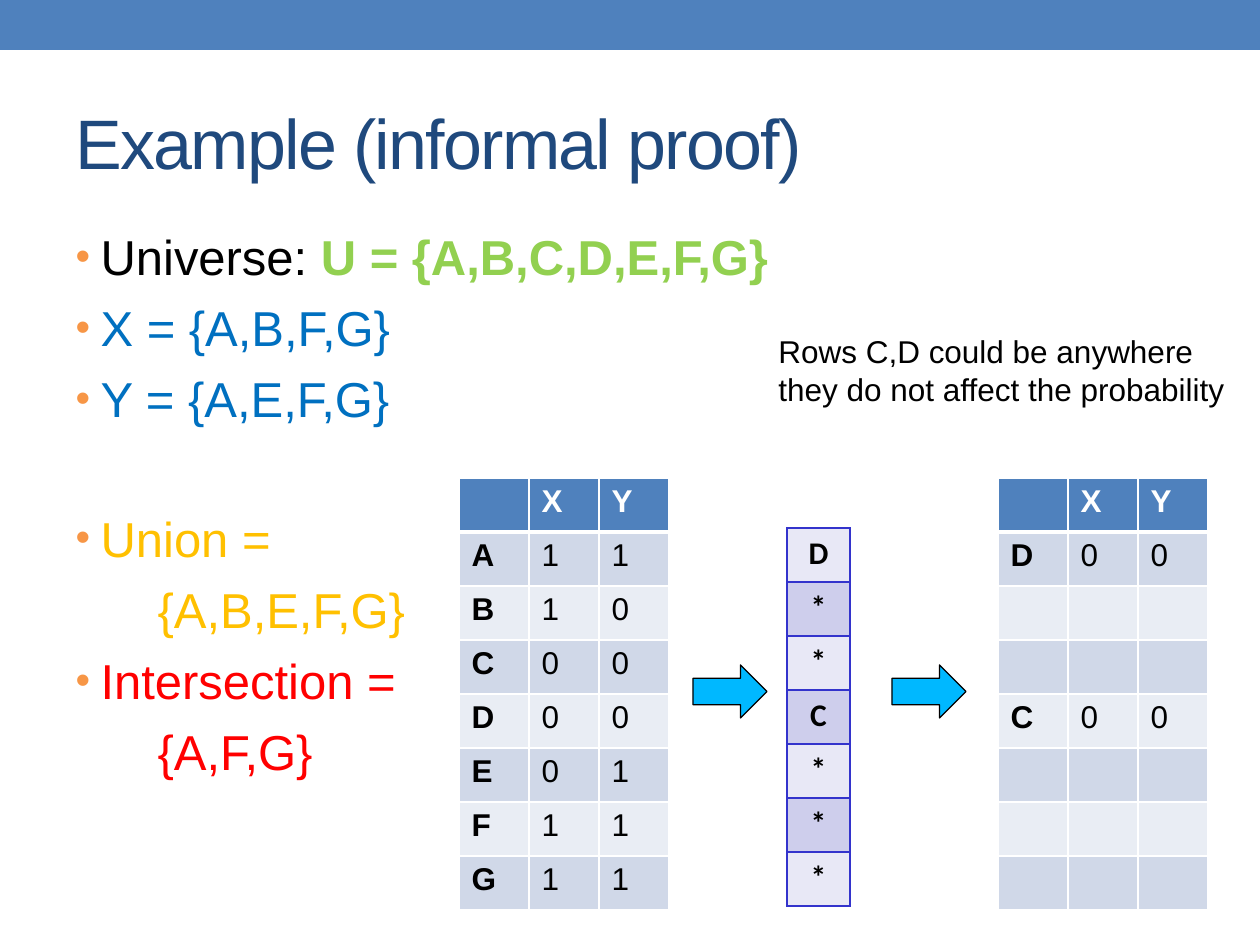
from lxml.etree import SubElement
from pptx import Presentation
from pptx.dml.color import RGBColor
from pptx.enum.shapes import MSO_SHAPE
from pptx.enum.text import MSO_ANCHOR, MSO_AUTO_SIZE, PP_ALIGN
from pptx.oxml.ns import qn
from pptx.util import Emu, Pt

SCALE = 914400 / 126  # EMU in one px

BLUE = RGBColor(0x4F, 0x81, 0xBD)
NAVY = RGBColor(0x1F, 0x49, 0x7D)
WHITE = RGBColor(0xFF, 0xFF, 0xFF)
BLACK = RGBColor(0x00, 0x00, 0x00)
GREEN = RGBColor(0x92, 0xD0, 0x50)
AZURE = RGBColor(0x00, 0x70, 0xC0)
GOLD = RGBColor(0xFF, 0xC0, 0x00)
RED = RGBColor(0xFF, 0x00, 0x00)
ORANGE = RGBColor(0xF7, 0x96, 0x46)
CYAN = RGBColor(0x00, 0xB8, 0xFF)
VIOLET = RGBColor(0x33, 0x33, 0xCC)
BANDS = (RGBColor(0xD0, 0xD8, 0xE8), RGBColor(0xE9, 0xED, 0xF4))
LILACS = (RGBColor(0xE8, 0xE8, 0xF6), RGBColor(0xCE, 0xCE, 0xEC))

ROW = 54
COL = 70
GAP = 7  # points before each list line
LINE = 39.2  # points from one list line to the next


def px(count):
    return Emu(round(count * SCALE))


def box(left, top, width, height):
    return px(left), px(top), px(width), px(height)


def add_run(para, text, size, color, bold=False, face="Arial"):
    run = para.add_run()
    run.text = text
    font = run.font
    font.name, font.size, font.bold = face, Pt(size), bold
    font.color.rgb = color
    return run


def place(shape, left, top, width, height):
    shape.left, shape.top, shape.width, shape.height = box(left, top, width, height)
    shape.text_frame.auto_size = MSO_AUTO_SIZE.NONE


def add_block(slide, kind, area, fill, line=None):
    shape = slide.shapes.add_shape(kind, *box(*area))
    shape.shadow.inherit = False
    shape.fill.solid()
    shape.fill.fore_color.rgb = fill
    if line is None:
        shape.line.fill.background()
    else:
        shape.line.color.rgb = line
        shape.line.width = Pt(0.75)


def set_title(slide, text):
    title = slide.shapes.title
    place(title, 63, 73, 1134, 136)
    title.text_frame.vertical_anchor = MSO_ANCHOR.MIDDLE
    para = title.text_frame.paragraphs[0]
    para.alignment = PP_ALIGN.LEFT
    run = add_run(para, text, 40, NAVY)
    run._r.get_or_add_rPr().set("spc", "-100")


def set_list(slide, items):
    """Each item: bullet or not, lines skipped before it, its runs."""
    body = slide.placeholders[1]
    place(body, 63, 220, 1134, 672)
    frame = body.text_frame
    for num, (dotted, skip, runs) in enumerate(items):
        para = frame.add_paragraph() if num else frame.paragraphs[0]
        para.space_before = Pt(GAP + skip * LINE)
        props = para._p.get_or_add_pPr()
        props.set("marL", str(px(25 if dotted else 82)))
        props.set("indent", str(px(-25 if dotted else 0)))
        if dotted:
            tint = SubElement(props, qn("a:buClr"))
            SubElement(tint, qn("a:srgbClr"), val=str(ORANGE))
            SubElement(props, qn("a:buSzPct"), val="85000")
            SubElement(props, qn("a:buFont"), typeface="Arial")
            SubElement(props, qn("a:buChar"), char="•")
        else:
            SubElement(props, qn("a:buNone"))
        for text, color, bold in runs:
            add_run(para, text, 28, color, bold)


def set_edges(cell, color, top=1, bottom=1):
    props = cell._tc.get_or_add_tcPr()
    for side, width in (("L", 1), ("R", 1), ("T", top), ("B", bottom)):
        edge = SubElement(props, qn("a:ln" + side), w=str(Pt(width)))
        fill = SubElement(edge, qn("a:solidFill"))
        SubElement(fill, qn("a:srgbClr"), val=str(color))


def set_cell(cell, fill):
    cell.fill.solid()
    cell.fill.fore_color.rgb = fill


def new_table(slide, left, top, rows, cols, width):
    area = box(left, top, cols * width, rows * ROW)
    table = slide.shapes.add_table(rows, cols, *area).table
    table.first_row = table.horz_banding = False
    for row in table.rows:
        row.height = px(ROW)
    for col in table.columns:
        col.width = px(width)
    return table


def add_matrix(slide, left, lines):
    """Header of set names above one banded line per member."""
    rows = [" XY"] + lines
    table = new_table(slide, left, 478, len(rows), 3, COL)
    for r, line in enumerate(rows):
        for c, text in enumerate(line.ljust(3)):
            cell = table.cell(r, c)
            head = r == 0
            set_edges(cell, WHITE, 3 if r == 1 else 1, 3 if head else 1)
            set_cell(cell, BLUE if head else BANDS[(r - 1) % 2])
            if text != " ":
                color = WHITE if head else BLACK
                add_run(cell.text_frame.paragraphs[0], text, 18, color, head or c == 0)


def add_order(slide, marks):
    """Single column with the shuffled row order."""
    table = new_table(slide, 787, 528, len(marks), 1, 63)
    for r, mark in enumerate(marks):
        cell = table.cell(r, 0)
        set_edges(cell, VIOLET)
        set_cell(cell, LILACS[r % 2])
        para = cell.text_frame.paragraphs[0]
        para.alignment = PP_ALIGN.CENTER
        add_run(para, mark, 18, BLACK, True, "Calibri")


def add_note(slide, text):
    frame = slide.shapes.add_textbox(*box(766, 326, 494, 89)).text_frame
    frame.word_wrap = True
    add_run(frame.paragraphs[0], text, 18, BLACK)


def main():
    deck = Presentation()
    deck.slide_width, deck.slide_height = px(1260), px(945)
    slide = deck.slides.add_slide(deck.slide_layouts[1])

    # Banner, title and list
    add_block(slide, MSO_SHAPE.RECTANGLE, (0, 0, 1260, 50), BLUE)
    set_title(slide, "Example (informal proof)")
    set_list(slide, [
        (True, 0, [("Universe: ", BLACK, False), ("U = {A,B,C,D,E,F,G}", GREEN, True)]),
        (True, 0, [("X = {A,B,F,G}", AZURE, False)]),
        (True, 0, [("Y = {A,E,F,G}", AZURE, False)]),
        (True, 1, [("Union =", GOLD, False)]),
        (False, 0, [("{A,B,E,F,G}", GOLD, False)]),
        (True, 0, [("Intersection =", RED, False)]),
        (False, 0, [("{A,F,G}", RED, False)]),
    ])

    # Tables from left to right, joined by arrows
    add_matrix(slide, 459, ["A11", "B10", "C00", "D00", "E01", "F11", "G11"])
    add_order(slide, "D**C***")
    add_matrix(slide, 998, ["D00", "", "", "C00", "", "", ""])
    for left in (693, 892):
        add_block(slide, MSO_SHAPE.RIGHT_ARROW, (left, 665, 74, 53), CYAN, BLACK)

    # Remark above the tables
    add_note(slide, "Rows C,D could be anywhere they do not affect the probability")

    deck.save("out.pptx")


if __name__ == "__main__":
    main()
